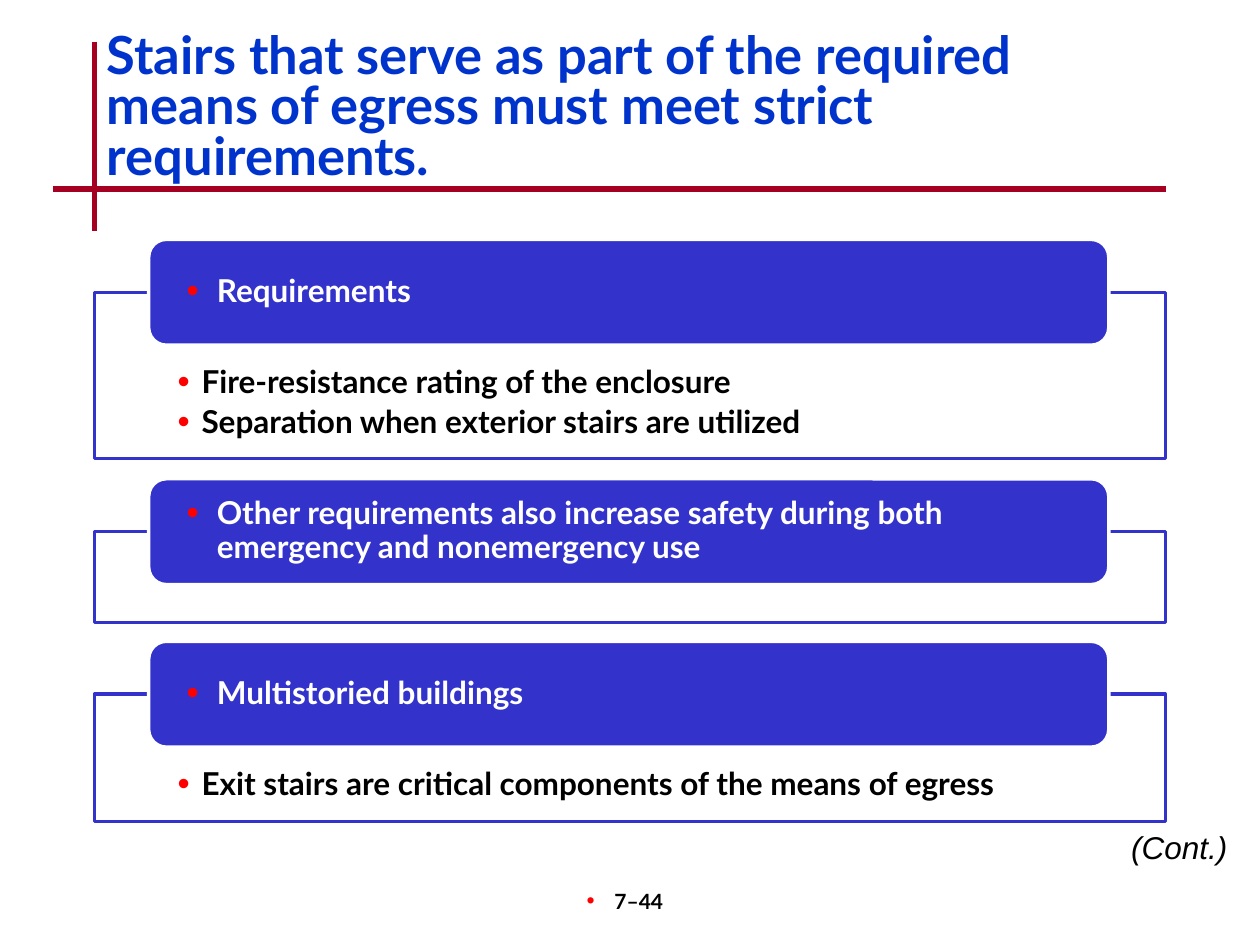
from dataclasses import dataclass

from lxml.etree import SubElement
from pptx import Presentation
from pptx.dml.color import RGBColor
from pptx.enum.shapes import MSO_CONNECTOR, MSO_SHAPE
from pptx.enum.text import MSO_ANCHOR, PP_ALIGN
from pptx.oxml.ns import qn
from pptx.util import Emu, Pt

SCALE = 9144


@dataclass(frozen=True)
class Theme:
    paper: str = "FFFFFF"
    ink: str = "000000"
    blue: str = "3333CC"
    title: str = "0033CC"
    rule: str = "A50021"
    dot: str = "FF0000"
    face: str = "Lato"
    plain: str = "Arial"
    head: int = 30
    body: int = 18
    foot: int = 12


@dataclass(frozen=True)
class Box:
    left: int
    top: int
    width: int
    height: int


@dataclass(frozen=True)
class Style:
    size: int
    color: str
    face: str = Theme.face
    bold: bool = True
    slant: bool = False
    align: PP_ALIGN = PP_ALIGN.LEFT
    lead: float = 1.0
    after: int = 0
    hang: int = 0


@dataclass(frozen=True)
class Group:
    top: int
    height: int
    head: str
    points: tuple[str, ...] = ()


THEME = Theme()
TITLE = Style(THEME.head, THEME.title, lead=0.8)
HEAD = Style(THEME.body, THEME.paper, lead=0.9, hang=24)
POINT = Style(THEME.body, THEME.ink, lead=0.9, after=3, hang=19)
PAGE = Style(THEME.foot, THEME.ink, align=PP_ALIGN.CENTER, hang=22)
CONT = Style(THEME.body, THEME.ink, THEME.plain, False, True, PP_ALIGN.RIGHT)

GROUPS = (
    Group(232, 132, "Requirements", (
        "Fire-resistance rating of the enclosure",
        "Separation when exterior stairs are utilized",
    )),
    Group(422, 72, "Other requirements also increase safety during both "
                   "emergency and nonemergency use"),
    Group(551, 101, "Multistoried buildings", (
        "Exit stairs are critical components of the means of egress",
    )),
)


def px(count: int) -> Emu:
    return Emu(count * SCALE)


def place(box: Box) -> tuple[Emu, ...]:
    return px(box.left), px(box.top), px(box.width), px(box.height)


def add_dot(para, hang: int) -> None:
    props = para._p.get_or_add_pPr()
    props.set("marL", str(px(hang)))
    props.set("indent", str(-px(hang)))
    tint = SubElement(props, qn("a:buClr"))
    SubElement(tint, qn("a:srgbClr"), val=THEME.dot)
    SubElement(props, qn("a:buSzPct"), val="110000")
    SubElement(props, qn("a:buFont"), typeface=THEME.plain)
    SubElement(props, qn("a:buChar"), char="•")


def write(frame, lines: tuple[str, ...], style: Style) -> None:
    frame.word_wrap = True
    for spot, line in enumerate(lines):
        para = frame.add_paragraph() if spot else frame.paragraphs[0]
        para.text = line
        if style.hang:
            add_dot(para, style.hang)
        para.alignment = style.align
        para.line_spacing = style.lead
        para.space_after = Pt(style.after)
        font = para.font
        font.name, font.size = style.face, Pt(style.size)
        font.bold, font.italic = style.bold, style.slant
        font.color.rgb = RGBColor.from_string(style.color)


def add_text(slide, box: Box, line: str, style: Style) -> None:
    write(slide.shapes.add_textbox(*place(box)).text_frame, (line,), style)


def add_rule(slide, x1: int, y1: int, x2: int, y2: int) -> None:
    rule = slide.shapes.add_connector(
        MSO_CONNECTOR.STRAIGHT, px(x1), px(y1), px(x2), px(y2))
    rule.line.color.rgb = RGBColor.from_string(THEME.rule)
    rule.line.width = Pt(3)
    SubElement(rule._element.spPr, qn("a:effectLst"))


def add_panel(slide, kind: MSO_SHAPE, box: Box, fill: str, edge: str):
    panel = slide.shapes.add_shape(kind, *place(box))
    panel.shadow.inherit = False
    panel.fill.solid()
    panel.fill.fore_color.rgb = RGBColor.from_string(fill)
    panel.line.color.rgb = RGBColor.from_string(edge)
    panel.line.width = Pt(2)
    return panel


def inset(frame, side: int, top: int, base: int) -> None:
    frame.margin_left = frame.margin_right = px(side)
    frame.margin_top, frame.margin_bottom = px(top), px(base)


def add_group(slide, group: Group) -> None:
    frame = add_panel(slide, MSO_SHAPE.RECTANGLE,
                      Box(75, group.top, 850, group.height),
                      THEME.paper, THEME.blue)
    tint = frame._element.spPr.find(qn("a:solidFill"))[0]
    SubElement(tint, qn("a:alpha"), val="90000")
    if group.points:
        text = frame.text_frame
        text.vertical_anchor = MSO_ANCHOR.TOP
        inset(text, 66, 59, 14)
        write(text, group.points, POINT)

    bar = add_panel(slide, MSO_SHAPE.ROUNDED_RECTANGLE,
                    Box(118, group.top - 42, 762, 84),
                    THEME.blue, THEME.paper)
    bar.text_frame.vertical_anchor = MSO_ANCHOR.MIDDLE
    inset(bar.text_frame, 26, 4, 4)
    write(bar.text_frame, (group.head,), HEAD)


def main() -> None:
    deck = Presentation()
    deck.slide_width, deck.slide_height = px(1000), px(750)
    slide = deck.slides.add_slide(deck.slide_layouts[6])
    add_rule(slide, 75, 33, 75, 183)
    add_rule(slide, 42, 150, 925, 150)
    add_text(slide, Box(392, 700, 208, 50), "7–44", PAGE)
    add_text(slide, Box(75, 22, 850, 100),
             "Stairs that serve as part of the required means of egress "
             "must meet strict requirements.", TITLE)
    for group in GROUPS:
        add_group(slide, group)
    add_text(slide, Box(817, 652, 167, 40), "(Cont.)", CONT)
    deck.save("out.pptx")


if __name__ == "__main__":
    main()
